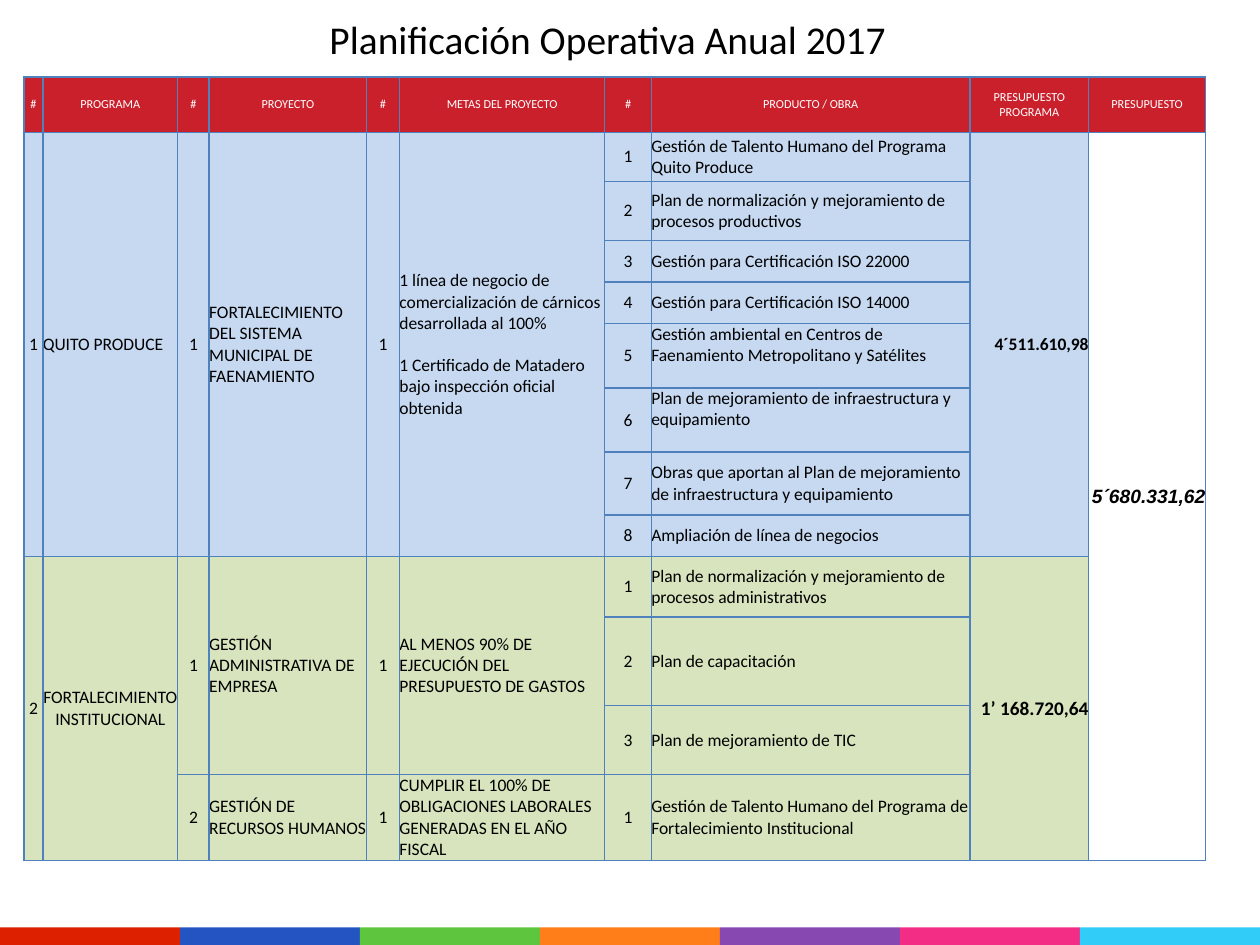
from lxml import etree
from pptx import Presentation
from pptx import util as u
from pptx.dml.color import RGBColor
from pptx.enum import shapes, text
from pptx.oxml.ns import qn

RED = RGBColor(0xCA, 0x20, 0x2C)
BLUE = RGBColor(0xC6, 0xD9, 0xF1)
GREEN = RGBColor(0xD7, 0xE4, 0xBD)
BLACK = RGBColor(0, 0, 0)
WHITE = RGBColor(0xFF, 0xFF, 0xFF)
BORDER = RGBColor(0x4F, 0x81, 0xBD)
STRIPES = [RGBColor.from_string(code) for code in (
    "DC2000", "2454C1", "5DC53E", "FF7E1A", "8748B1", "F32C86", "32CCF9")]

LEFT, CENTER, RIGHT = text.PP_ALIGN.LEFT, text.PP_ALIGN.CENTER, text.PP_ALIGN.RIGHT
TOP, MIDDLE = text.MSO_ANCHOR.TOP, text.MSO_ANCHOR.MIDDLE

TITLE = "Planificación Operativa Anual 2017"
HEADERS = ["#", "PROGRAMA", "#", "PROYECTO", "#", "METAS DEL PROYECTO", "#",
           "PRODUCTO / OBRA", "PRESUPUESTO PROGRAMA", "PRESUPUESTO"]
COLUMNS = [0.15, 1.07, 0.25, 1.25, 0.26, 1.63, 0.37, 2.53, 0.94, 0.93]
ROWS = [0.44, 0.39, 0.47, 0.33, 0.33, 0.51, 0.51, 0.5, 0.33, 0.48, 0.7, 0.55, 0.68]
TOTAL = "5´680.331,62"

PROGRAMS = [
    {"name": "QUITO PRODUCE", "align": LEFT, "fill": BLUE,
     "budget": "4´511.610,98", "size": 10,
     "projects": [
         {"name": "FORTALECIMIENTO DEL SISTEMA MUNICIPAL DE FAENAMIENTO",
          "goals": ["1 línea de negocio de comercialización de cárnicos desarrollada al 100%",
                    "1 Certificado de Matadero bajo inspección oficial obtenida"],
          "products": [
              ("Gestión de Talento Humano del Programa Quito Produce", MIDDLE),
              ("Plan de normalización y mejoramiento de procesos productivos", MIDDLE),
              ("Gestión para Certificación ISO 22000", MIDDLE),
              ("Gestión para Certificación ISO 14000", MIDDLE),
              ("Gestión ambiental en Centros de Faenamiento Metropolitano y Satélites", TOP),
              ("Plan de mejoramiento de infraestructura y equipamiento", TOP),
              ("Obras que aportan al Plan de mejoramiento de infraestructura y equipamiento",
               MIDDLE),
              ("Ampliación de línea de negocios", MIDDLE)]}]},
    {"name": "FORTALECIMIENTO INSTITUCIONAL", "align": CENTER, "fill": GREEN,
     "budget": "1’ 168.720,64", "size": 11,
     "projects": [
         {"name": "GESTIÓN ADMINISTRATIVA DE EMPRESA",
          "goals": ["AL MENOS 90% DE EJECUCIÓN DEL PRESUPUESTO DE GASTOS"],
          "products": [
              ("Plan de normalización y mejoramiento de procesos administrativos", MIDDLE),
              ("Plan de capacitación", MIDDLE),
              ("Plan de mejoramiento de TIC", MIDDLE)]},
         {"name": "GESTIÓN DE RECURSOS HUMANOS",
          "goals": ["CUMPLIR EL 100% DE OBLIGACIONES LABORALES GENERADAS EN EL AÑO FISCAL"],
          "products": [
              ("Gestión de Talento Humano del Programa de Fortalecimiento Institucional",
               MIDDLE)]}]},
]


def write(frame, lines, align=LEFT, size=10, color=BLACK, font="Calibri",
          bold=False, italic=False):
    for index, line in enumerate(lines):
        para = frame.add_paragraph() if index else frame.paragraphs[0]
        para.alignment = align
        if index:
            para.space_before = u.Pt(12)
        span = para.add_run()
        span.text = line
        span.font.name, span.font.size = font, u.Pt(size)
        span.font.bold, span.font.italic = bold, italic
        span.font.color.rgb = color


def style_cell(cell, fill):
    cell.margin_left = cell.margin_right = cell.margin_top = cell.margin_bottom = 0
    properties = cell._tc.get_or_add_tcPr()
    for side in ("a:lnL", "a:lnR", "a:lnT", "a:lnB"):
        line = etree.SubElement(properties, qn(side), w=str(u.Pt(1)))
        solid = etree.SubElement(line, qn("a:solidFill"))
        etree.SubElement(solid, qn("a:srgbClr"), val=str(BORDER))
    if fill is None:
        cell.fill.background()
    else:
        cell.fill.solid()
        cell.fill.fore_color.rgb = fill


def put(table, row, column, lines, fill, span=1, anchor=MIDDLE, **style):
    for offset in range(span):
        style_cell(table.cell(row + offset, column), fill)
    cell = table.cell(row, column)
    if span > 1:
        cell.merge(table.cell(row + span - 1, column))
    cell.vertical_anchor = anchor
    write(cell.text_frame, lines, **style)


def fill_table(table):
    for column, header in enumerate(HEADERS):
        put(table, 0, column, [header], RED, align=CENTER, size=7, color=WHITE)
    row = 1
    for number, program in enumerate(PROGRAMS, 1):
        fill = program["fill"]
        height = sum(len(project["products"]) for project in program["projects"])
        put(table, row, 0, [str(number)], fill, height, align=CENTER)
        put(table, row, 1, [program["name"]], fill, height, align=program["align"])
        put(table, row, 8, [program["budget"]], fill, height, align=RIGHT,
            size=program["size"], bold=True)
        for index, project in enumerate(program["projects"], 1):
            count = len(project["products"])
            put(table, row, 2, [str(index)], fill, count, align=CENTER)
            put(table, row, 3, [project["name"]], fill, count)
            put(table, row, 4, ["1"], fill, count, align=CENTER)
            put(table, row, 5, project["goals"], fill, count)
            for item, (product, anchor) in enumerate(project["products"], 1):
                put(table, row, 6, [str(item)], fill, align=CENTER)
                put(table, row, 7, [product], fill, anchor=anchor)
                row += 1
    put(table, 1, 9, [TOTAL], None, len(ROWS) - 1, align=RIGHT, size=11,
        font="Arial", bold=True, italic=True)


def main():
    deck = Presentation()
    deck.slide_width, deck.slide_height = u.Inches(10), u.Inches(7.5)
    page = deck.slides.add_slide(deck.slide_layouts[6])

    width = deck.slide_width / len(STRIPES)
    for index, color in enumerate(STRIPES):
        stripe = page.shapes.add_shape(
            shapes.MSO_SHAPE.RECTANGLE, int(index * width), u.Inches(7.36),
            int(width), u.Inches(0.22))
        stripe.shadow.inherit = False
        stripe.fill.solid()
        stripe.fill.fore_color.rgb = color
        stripe.line.fill.background()

    box = page.shapes.add_textbox(u.Inches(0.25), 0, u.Inches(9.15), u.Inches(0.61))
    box.text_frame.word_wrap = True
    box.text_frame.vertical_anchor = MIDDLE
    write(box.text_frame, [TITLE], align=CENTER, size=22.5)

    table = page.shapes.add_table(
        len(ROWS), len(COLUMNS), u.Inches(0.19), u.Inches(0.61),
        u.Inches(sum(COLUMNS)), u.Inches(sum(ROWS))).table
    table.first_row = table.horz_banding = False
    for column, size in zip(table.columns, COLUMNS):
        column.width = u.Inches(size)
    for row, size in zip(table.rows, ROWS):
        row.height = u.Inches(size)
    fill_table(table)
    deck.save("out.pptx")


if __name__ == "__main__":
    main()
